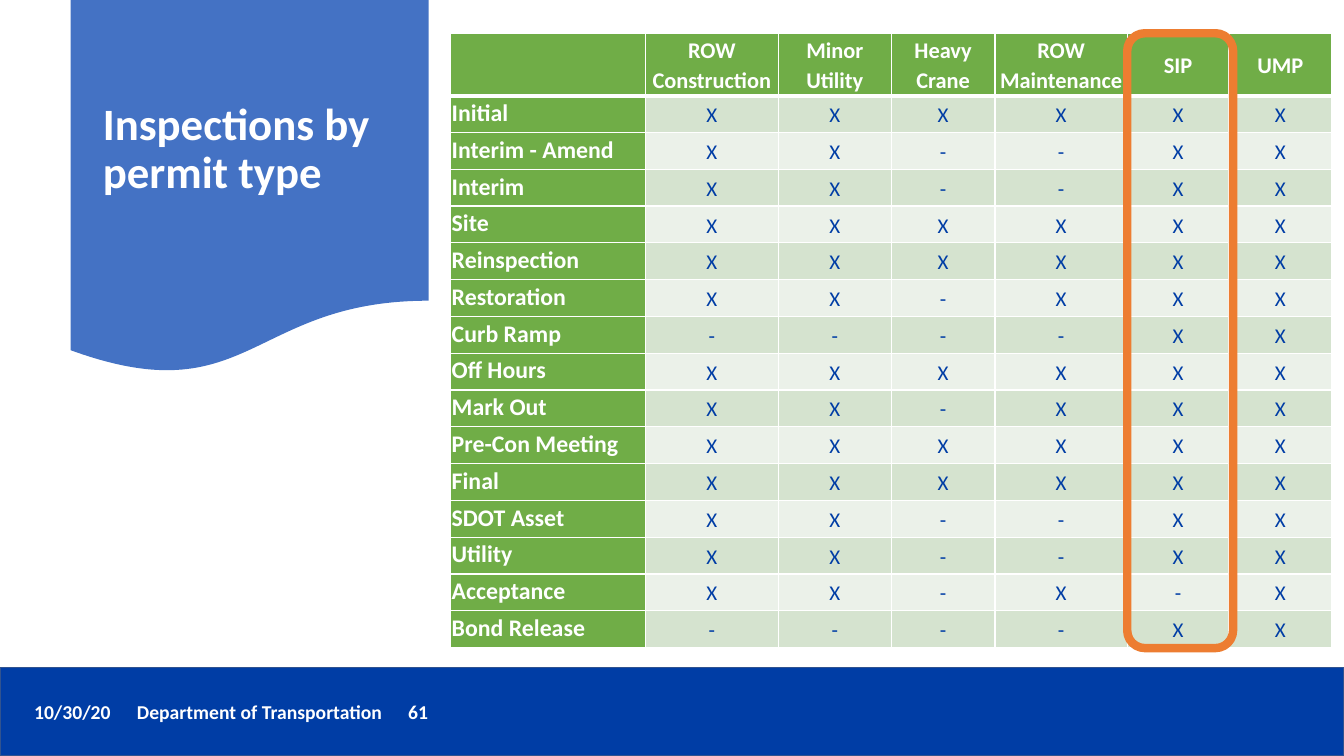
from lxml import etree
from pptx import Presentation
from pptx.dml.color import RGBColor
from pptx.enum.shapes import MSO_SHAPE
from pptx.enum.text import MSO_ANCHOR, MSO_AUTO_SIZE, PP_ALIGN
from pptx.oxml.ns import qn
from pptx.util import Inches, Pt

RECTANGLE = MSO_SHAPE.RECTANGLE
WAVE = MSO_SHAPE.FLOWCHART_DOCUMENT
ROUNDED_FRAME = MSO_SHAPE.FLOWCHART_ALTERNATE_PROCESS
LEFT, CENTER = PP_ALIGN.LEFT, PP_ALIGN.CENTER
TOP, MIDDLE = MSO_ANCHOR.TOP, MSO_ANCHOR.MIDDLE
NO_AUTOFIT = MSO_AUTO_SIZE.NONE

FONT = "Calibri"
WHITE, NAVY, BLUE = "FFFFFF", "003DA5", "4472C4"
GREEN, ORANGE = "70AD47", "ED7D31"
BANDS = ("D5E3CF", "EBF1E9")

PERMITS = ["ROW Construction", "Minor Utility", "Heavy Crane",
           "ROW Maintenance", "SIP", "UMP"]
INSPECTIONS = [
    ("Initial", "XXXXXX"),
    ("Interim - Amend", "XX--XX"),
    ("Interim", "XX--XX"),
    ("Site", "XXXXXX"),
    ("Reinspection", "XXXXXX"),
    ("Restoration", "XX-XXX"),
    ("Curb Ramp", "----XX"),
    ("Off Hours", "XXXXXX"),
    ("Mark Out", "XX-XXX"),
    ("Pre-Con Meeting", "XXXXXX"),
    ("Final", "XXXXXX"),
    ("SDOT Asset", "XX--XX"),
    ("Utility", "XX--XX"),
    ("Acceptance", "XX-X-X"),
    ("Bond Release", "----XX"),
]
TABLE_LEFT, TABLE_TOP, TABLE_HEIGHT = 4.47, 0.33, 6.1
HEADER_HEIGHT = 0.62
COLUMN_WIDTHS = [1.93, 1.32, 1.12, 1.03, 1.31, 1.01, 1.02]


def rgb(color):
    return RGBColor.from_string(color)


def add_run(paragraph, text, size, color=WHITE, bold=True):
    run = paragraph.add_run()
    run.text = text
    font = run.font
    font.name, font.size, font.bold = FONT, Pt(size), bold
    font.color.rgb = rgb(color)


def add_box(slide, preset, left, top, width, height,
            fill=None, line=None, line_width=1):
    box = slide.shapes.add_shape(preset, Inches(left), Inches(top),
                                 Inches(width), Inches(height))
    box.shadow.inherit = False
    if fill:
        box.fill.solid()
        box.fill.fore_color.rgb = rgb(fill)
    else:
        box.fill.background()
    if line:
        box.line.color.rgb = rgb(line)
        box.line.width = Pt(line_width)
    else:
        box.line.fill.background()


def add_footer(slide):
    add_box(slide, RECTANGLE, 0, 6.62, 13.33, 0.88, NAVY, "31538F")
    footer = slide.shapes.add_textbox(Inches(0.24), Inches(6.89),
                                      Inches(10.06), Inches(0.34))
    footer.text_frame.word_wrap = True
    paragraph = footer.text_frame.paragraphs[0]
    tabs = etree.SubElement(paragraph._p.get_or_add_pPr(), qn("a:tabLst"))
    for position in (1.02, 3.71):
        etree.SubElement(tabs, qn("a:tab"), pos=str(Inches(position)), algn="l")
    add_run(paragraph, "10/30/20\tDepartment of Transportation\t61", 14)


def add_title(slide):
    add_box(slide, WAVE, 0.7, 0, 3.55, 3.72, BLUE)
    title = slide.shapes.title
    title.left, title.top = Inches(0.92), Inches(0.19)
    title.width, title.height = Inches(3.11), Inches(2.59)
    frame = title.text_frame
    frame.word_wrap, frame.auto_size = True, NO_AUTOFIT
    frame.vertical_anchor = MIDDLE
    paragraph = frame.paragraphs[0]
    paragraph.alignment, paragraph.line_spacing = LEFT, 0.9
    add_run(paragraph, "Inspections by permit type", 32)
    # Bring the title in front of the wave
    slide.shapes._spTree.append(title._element)


def set_borders(cell, bottom_width):
    properties = cell._tc.get_or_add_tcPr()
    widths = {"L": 1, "R": 1, "T": 1, "B": bottom_width}
    for index, (side, width) in enumerate(widths.items()):
        border = etree.Element(qn(f"a:ln{side}"), w=str(Pt(width)))
        fill = etree.SubElement(border, qn("a:solidFill"))
        etree.SubElement(fill, qn("a:srgbClr"), val=WHITE)
        properties.insert(index, border)


def fill_cell(cell, text, size, fill, color=WHITE, bold=True,
              align=CENTER, anchor=MIDDLE, bottom_width=1):
    cell.margin_left = cell.margin_top = cell.margin_right = Inches(0.01)
    cell.margin_bottom = 0
    cell.vertical_anchor = anchor
    cell.fill.solid()
    cell.fill.fore_color.rgb = rgb(fill)
    set_borders(cell, bottom_width)
    if text:
        paragraph = cell.text_frame.paragraphs[0]
        paragraph.alignment, paragraph.line_spacing = align, 1.07
        add_run(paragraph, text, size, color, bold)


def add_inspection_table(slide):
    table = slide.shapes.add_table(
        len(INSPECTIONS) + 1, len(COLUMN_WIDTHS),
        Inches(TABLE_LEFT), Inches(TABLE_TOP),
        Inches(sum(COLUMN_WIDTHS)), Inches(TABLE_HEIGHT)).table
    for column, width in zip(table.columns, COLUMN_WIDTHS):
        column.width = Inches(width)
    row_height = (TABLE_HEIGHT - HEADER_HEIGHT) / len(INSPECTIONS)
    for row in table.rows:
        row.height = Inches(row_height)
    table.rows[0].height = Inches(HEADER_HEIGHT)

    for column, permit in enumerate(["", *PERMITS]):
        fill_cell(table.cell(0, column), permit, 16, GREEN, bottom_width=3)
    for row, (inspection, marks) in enumerate(INSPECTIONS, 1):
        fill_cell(table.cell(row, 0), inspection, 17, GREEN,
                  align=LEFT, anchor=TOP)
        for column, mark in enumerate(marks, 1):
            fill_cell(table.cell(row, column), mark, 15,
                      BANDS[(row - 1) % 2], NAVY, bold=False)


def add_sip_highlight(slide):
    sip = PERMITS.index("SIP") + 1
    left = TABLE_LEFT + sum(COLUMN_WIDTHS[:sip])
    add_box(slide, ROUNDED_FRAME, left, TABLE_TOP, 1.05, TABLE_HEIGHT,
            line=ORANGE, line_width=6)


def main():
    deck = Presentation()
    deck.slide_width, deck.slide_height = Inches(13.33), Inches(7.5)
    slide = deck.slides.add_slide(deck.slide_layouts[5])
    add_footer(slide)
    add_title(slide)
    add_inspection_table(slide)
    add_sip_highlight(slide)
    deck.save("out.pptx")


if __name__ == "__main__":
    main()
